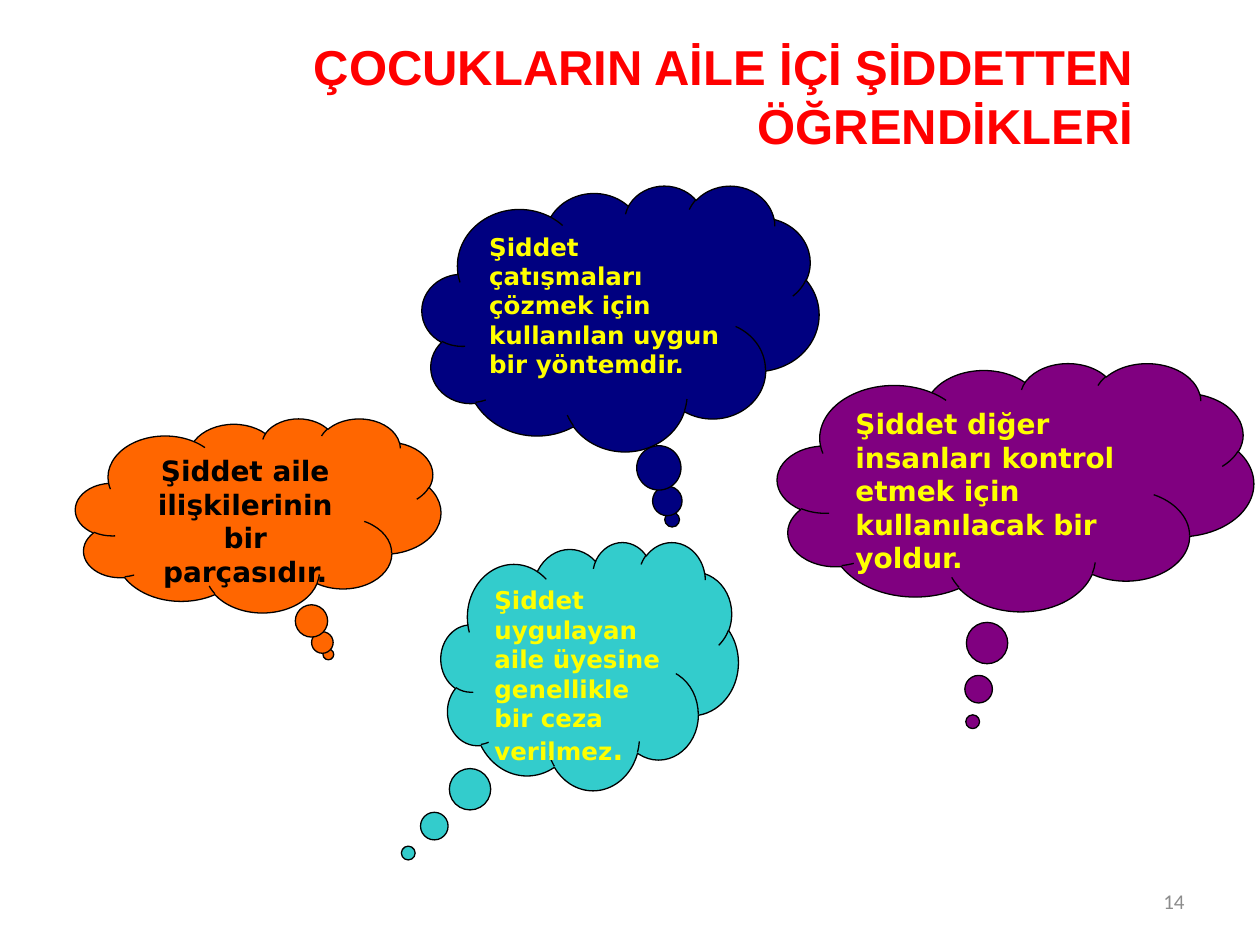
from pptx import Presentation
from pptx.dml.color import RGBColor
from pptx.enum.shapes import MSO_SHAPE
from pptx.enum.text import MSO_ANCHOR, PP_ALIGN
from pptx.util import Inches, Pt

YELLOW = "FFFF00"
BLACK = "000000"
CLOUDS = [
    ((3.5, 4.3, 2.36, 1.97), (-0.61, 0.754), "33CCCC",
     [("Şiddet uygulayan aile üyesine genellikle bir ceza verilmez", 14), (".", 16)],
     YELLOW, PP_ALIGN.LEFT),
    ((3.35, 1.47, 3.15, 2.11), (0.13, 0.758), "000080",
     [("Şiddet çatışmaları çözmek için kullanılan uygun bir yöntemdir.", 14)],
     YELLOW, PP_ALIGN.LEFT),
    ((6.17, 2.88, 3.78, 1.97), (-0.09, 0.946), "800080",
     [("Şiddet diğer insanları kontrol etmek için kullanılacak bir yoldur.", 16)],
     YELLOW, PP_ALIGN.LEFT),
    ((0.6, 3.32, 2.9, 1.54), (0.192, 0.717), "FF6600",
     [("Şiddet aile ilişkilerinin bir parçasıdır.", 16)],
     BLACK, PP_ALIGN.CENTER),
]


def color(value):
    """Turn a hex string into a colour."""
    return RGBColor.from_string(value)


def write_text(shape, runs, *, font, fill, bold=True, align=PP_ALIGN.LEFT,
               anchor=MSO_ANCHOR.TOP):
    """Write runs of (text, size) into one paragraph of a shape."""
    frame = shape.text_frame
    frame.word_wrap = True
    frame.vertical_anchor = anchor
    paragraph = frame.paragraphs[0]
    paragraph.alignment = align
    for text, size in runs:
        run = paragraph.add_run()
        run.text = text
        run.font.name = font
        run.font.size = Pt(size)
        run.font.bold = bold
        run.font.color.rgb = color(fill)


def add_label(slide, box, text, size, **text_format):
    """Add a text box that fills the given box."""
    shape = slide.shapes.add_textbox(*map(Inches, box))
    write_text(shape, [(text, size)], **text_format)


def add_cloud(slide, box, tail, fill, runs, text_color, align):
    """Add a thought cloud whose tail is relative to its box."""
    shape = slide.shapes.add_shape(MSO_SHAPE.CLOUD_CALLOUT, *map(Inches, box))
    shape.adjustments[0], shape.adjustments[1] = tail
    shape.shadow.inherit = False
    shape.fill.solid()
    shape.fill.fore_color.rgb = color(fill)
    shape.line.color.rgb = color(BLACK)
    shape.line.width = Pt(0.75)
    write_text(shape, runs, font="DejaVu Sans", fill=text_color, align=align)


def main():
    """Build and save the slide."""
    presentation = Presentation()
    presentation.slide_width = Inches(10)
    presentation.slide_height = Inches(7.5)
    slide = presentation.slides.add_slide(presentation.slide_layouts[6])
    add_label(slide, (1.77, 0.24, 7.32, 1.04),
              "ÇOCUKLARIN AİLE İÇİ ŞİDDETTEN ÖĞRENDİKLERİ", 28,
              font="Arial", fill="FF0000", align=PP_ALIGN.RIGHT)
    for cloud in CLOUDS:
        add_cloud(slide, *cloud)
    add_label(slide, (7.17, 6.95, 2.33, 0.4), "14", 12, font="Calibri",
              fill="8C8C8C", bold=False, align=PP_ALIGN.RIGHT,
              anchor=MSO_ANCHOR.MIDDLE)
    presentation.save("out.pptx")


if __name__ == "__main__":
    main()
